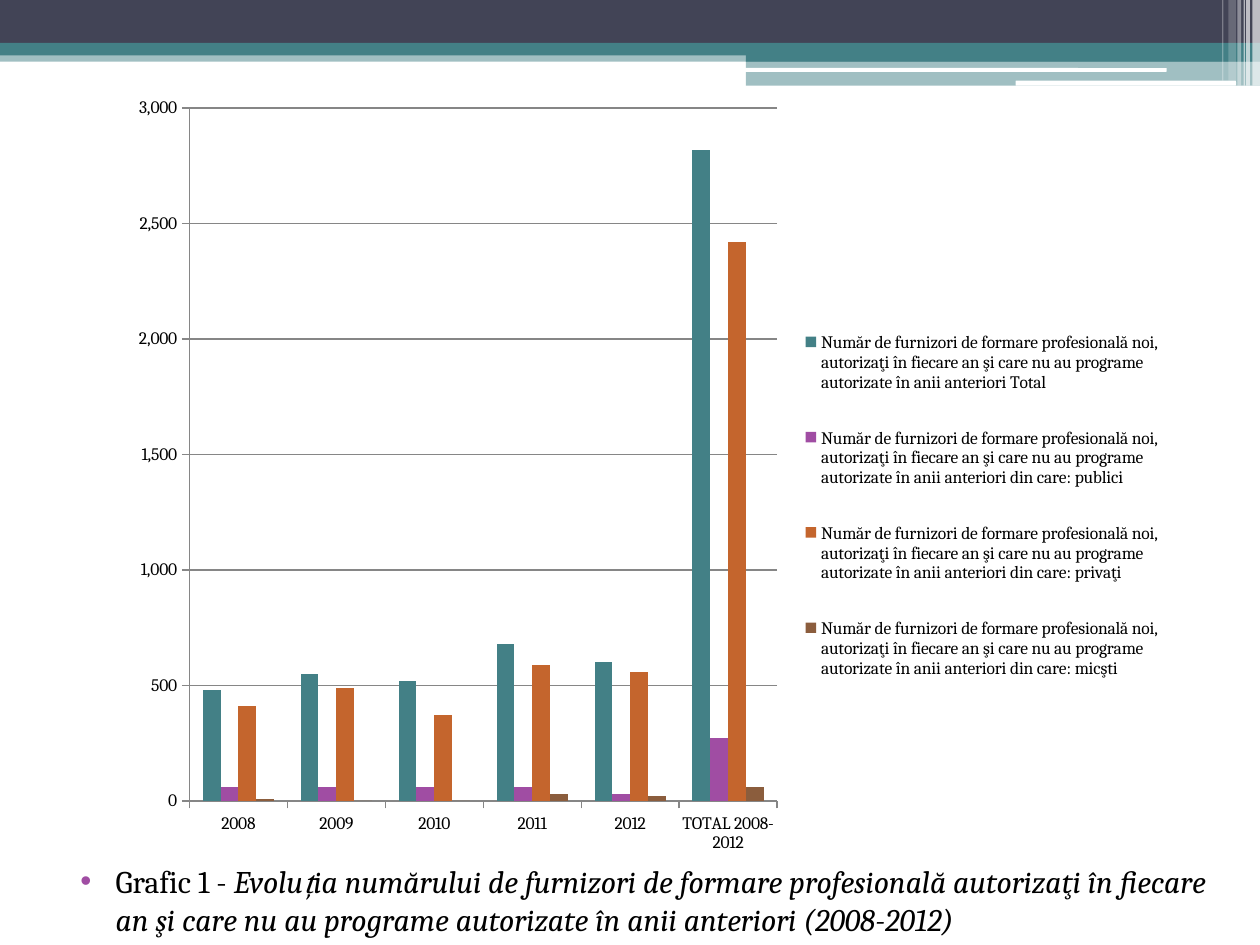
from lxml import etree
from pptx import Presentation, util as u
from pptx.chart.data import CategoryChartData
from pptx.dml.color import RGBColor
from pptx.enum import chart as ch, shapes, text
from pptx.oxml import parse_xml
from pptx.oxml.ns import nsdecls, qn

COLORS = {"navy": "424456", "teal": "438086", "purple": "A04DA3", "orange": "C4652D",
          "brown": "8B5D3D", "white": "FFFFFF", "black": "000000", "grey": "868686"}
FONT = "Cambria"


def rgb(name):
    return RGBColor.from_string(COLORS[name])


def set_layout(parent, index, target, x, y, w, h):
    """Place a chart part by fractions of the chart area."""
    for old in parent.findall(qn("c:layout")):
        parent.remove(old)
    inner = f'<c:layoutTarget val="{target}"/>' if target else ""
    modes = '<c:xMode val="edge"/><c:yMode val="edge"/>'
    parent.insert(index, parse_xml(
        f'<c:layout {nsdecls("c")}><c:manualLayout>{inner}{modes}'
        f'<c:x val="{x}"/><c:y val="{y}"/><c:w val="{w}"/><c:h val="{h}"/>'
        "</c:manualLayout></c:layout>"))


prs = Presentation()
prs.slide_width, prs.slide_height = u.Inches(10), u.Inches(7.5)
slide = prs.slides.add_slide(prs.slide_layouts[6])

# Header bands: left, top, width, height, colour, opacity in percent, rounded
bands = [
    (0, 0.4, 10, 0.09, "teal", 50, False),
    (0, 0, 10, 0.34, "navy", 100, False),
    (0, 0.34, 10, 0.1, "teal", 100, False),
    (5.92, 0.39, 4.08, 0.1, "teal", 100, False),
    (5.92, 0.48, 4.08, 0.2, "teal", 50, False),
    (5.91, 0.54, 3.35, 0.03, "white", 100, True),
    (8.06, 0.64, 1.75, 0.04, "white", 100, True),
]
# Translucent stripes at the right edge: left, width, height, opacity
stripes = [(9.94, 0.06, 0.68, 65), (9.89, 0.03, 0.68, 65), (9.87, 0.01, 0.68, 60),
           (9.82, 0.03, 0.68, 40), (9.75, 0.06, 0.64, 20), (9.7, 0.01, 0.64, 30)]
bands += [(left, 0, width, height, "white", opacity, False)
          for left, width, height, opacity in stripes]

for left, top, width, height, color, opacity, rounded in bands:
    preset = shapes.MSO_SHAPE.ROUNDED_RECTANGLE if rounded else shapes.MSO_SHAPE.RECTANGLE
    band = slide.shapes.add_shape(preset, *map(u.Inches, (left, top, width, height)))
    band.shadow.inherit = False
    band.line.fill.background()
    band.fill.solid()
    band.fill.fore_color.rgb = rgb(color)
    if opacity < 100:
        fill_color = band.fill._xPr.find(qn("a:solidFill"))[0]
        etree.SubElement(fill_color, qn("a:alpha"), val=str(opacity * 1000))

# Column chart of newly authorised providers
prefix = ("Număr de furnizori de formare profesională noi, autorizaţi în fiecare an "
          "şi care nu au programe autorizate în anii anteriori ")
providers = [
    ("Total", "teal", (480, 550, 520, 680, 600, 2820)),
    ("din care: publici", "purple", (60, 60, 60, 60, 30, 270)),
    ("din care: privaţi", "orange", (410, 490, 370, 590, 560, 2420)),
    ("din care: micşti", "brown", (10, 0, 0, 30, 20, 60)),
]
data = CategoryChartData(number_format="#,##0")
data.categories = ["2008", "2009", "2010", "2011", "2012", "TOTAL 2008- 2012"]
for kind, _, values in providers:
    data.add_series(prefix + kind, values)
chart = slide.shapes.add_chart(
    ch.XL_CHART_TYPE.COLUMN_CLUSTERED, u.Inches(0.92), u.Inches(0.67),
    u.Inches(8.33), u.Inches(6.25), data).chart
chart.has_title = False
chart.font.name, chart.font.size = FONT, u.Pt(10)
chart.font.color.rgb = rgb("black")

plot = chart.plots[0]
plot.gap_width, plot.overlap, plot.vary_by_categories = 150, 0, False
for series, (_, color, _) in zip(plot.series, providers):
    series.format.fill.solid()
    series.format.fill.fore_color.rgb = rgb(color)

counts = chart.value_axis
counts.minimum_scale, counts.maximum_scale, counts.major_unit = 0, 3000, 500
counts.has_major_gridlines = True
counts.tick_labels.number_format = "#,##0"
counts.tick_labels.number_format_is_linked = False
for axis in (chart.category_axis, counts):
    axis.major_tick_mark = ch.XL_TICK_MARK.OUTSIDE
    axis.minor_tick_mark = ch.XL_TICK_MARK.NONE
for part in (chart.category_axis, counts, counts.major_gridlines):
    part.format.line.color.rgb = rgb("grey")
    part.format.line.width = u.Pt(0.75)

chart.has_legend = True
chart.legend.position = ch.XL_LEGEND_POSITION.RIGHT
chart.legend.include_in_layout = False
set_layout(plot._element.getparent(), 0, "inner", 0.07, 0.03, 0.56, 0.88)
set_layout(chart.legend._element, 1, None, 0.65, 0.27, 0.35, 0.53)

# Caption
caption = slide.shapes.add_textbox(*map(u.Inches, (0.42, 6.79, 9.33, 0.71))).text_frame
caption.word_wrap = True
caption.vertical_anchor = text.MSO_ANCHOR.TOP
paragraph = caption.paragraphs[0]
paragraph.space_before = u.Pt(3)
props = paragraph._p.get_or_add_pPr()
props.set("marL", str(u.Inches(0.4)))
props.set("indent", str(u.Inches(-0.28)))
bullet_color = etree.SubElement(props, qn("a:buClr"))
etree.SubElement(bullet_color, qn("a:srgbClr"), val=COLORS["purple"])
etree.SubElement(props, qn("a:buFont"), typeface="Arial")
etree.SubElement(props, qn("a:buChar"), char="•")
for words, italic in [
    ("Grafic 1 - ", False),
    ("Evoluția numărului de furnizori de formare profesională autorizaţi în fiecare an "
     "şi care nu au programe autorizate în anii anteriori (2008-2012)", True),
]:
    run = paragraph.add_run()
    run.text = words
    run.font.name, run.font.size, run.font.italic = FONT, u.Pt(18), italic
    run.font.color.rgb = rgb("black")

prs.save("out.pptx")
